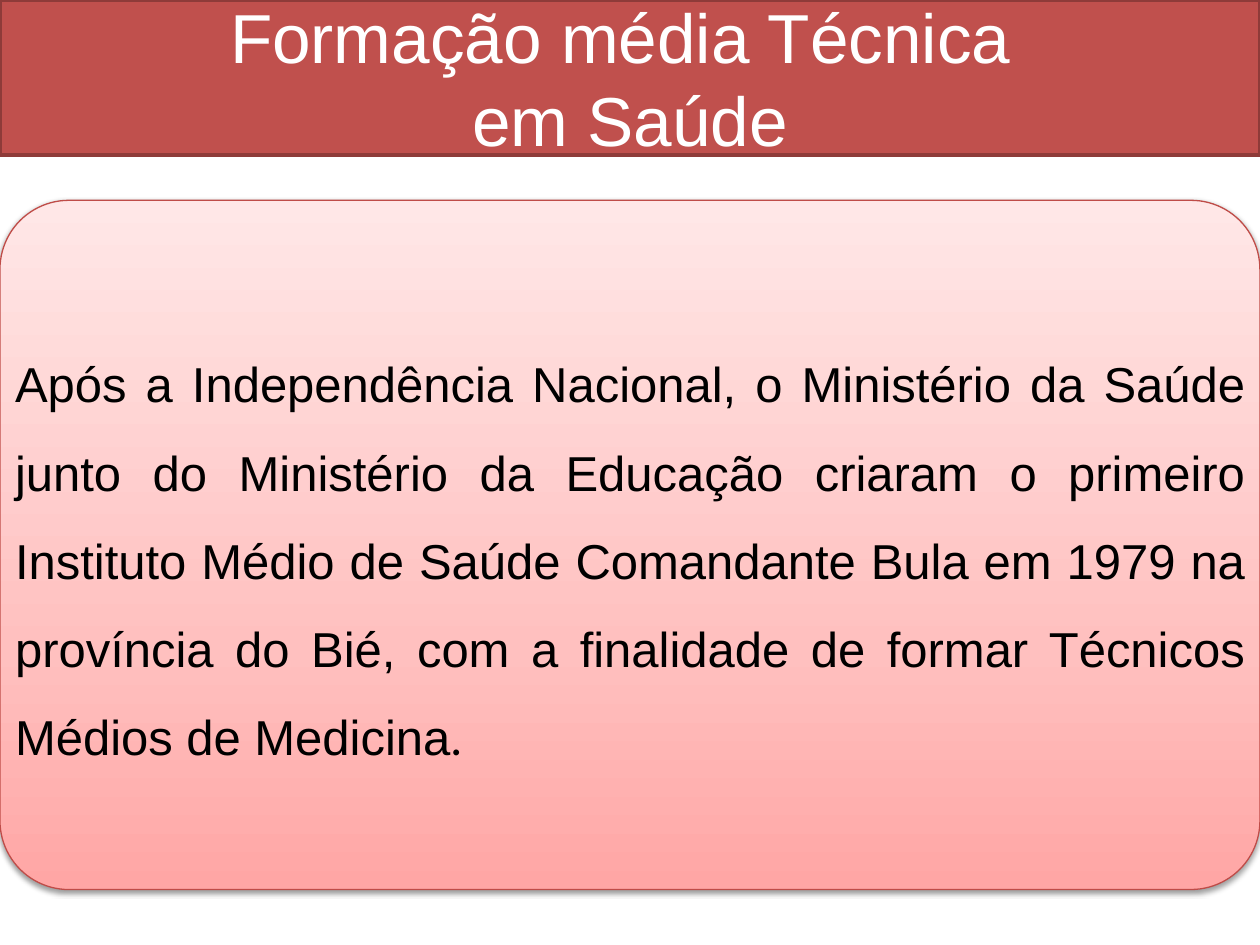
import pptx
import pptx.util
import pptx.oxml
import pptx.oxml.ns
from pptx.dml.color import RGBColor
from pptx.enum.shapes import MSO_SHAPE
from pptx.enum.text import MSO_ANCHOR, PP_ALIGN
from pptx.util import Inches, Pt

RED = RGBColor(0xC0, 0x50, 0x4D)
DARK = RGBColor(0x8E, 0x3B, 0x39)
EDGE = RGBColor(0xBF, 0x4C, 0x48)
WHITE = RGBColor(0xFF, 0xFF, 0xFF)
BLACK = RGBColor(0, 0, 0)
STOPS = [(0, RGBColor(0xFF, 0xA6, 0xA5)),
         (35, RGBColor(0xFF, 0xC0, 0xBF)),
         (100, RGBColor(0xFF, 0xE7, 0xE7))]

TITLE = "Formação média Técnica \vem Saúde"
BODY = ("Após a Independência Nacional, o Ministério da Saúde junto do "
        "Ministério da Educação criaram o primeiro Instituto Médio de Saúde "
        "Comandante Bula em 1979 na província do Bié, com a finalidade de "
        "formar Técnicos Médios de Medicina")


def style(run, size, color, face="Arial"):
    run.font.size = Pt(size)
    run.font.name = face
    run.font.color.rgb = color


def outline(shape, color, width):
    shape.line.color.rgb = color
    shape.line.width = Pt(width)


def shade(shape):
    """Give the shape an upward gradient and a soft shadow below it."""
    props = shape._element.spPr
    space = pptx.oxml.ns.nsdecls("a")
    stops = "".join(f'<a:gs pos="{pos * 1000}"><a:srgbClr val="{color}"/></a:gs>'
                    for pos, color in STOPS)
    fill = pptx.oxml.parse_xml(
        f'<a:gradFill {space} rotWithShape="1"><a:gsLst>{stops}</a:gsLst>'
        '<a:lin ang="16200000" scaled="1"/></a:gradFill>')
    props.find(pptx.oxml.ns.qn("a:prstGeom")).addnext(fill)
    shadow = pptx.oxml.parse_xml(
        f'<a:effectLst {space}><a:outerShdw blurRad="{Pt(3.1)}" '
        f'dist="{Pt(1.6)}" dir="5400000" rotWithShape="0">'
        '<a:srgbClr val="000000"><a:alpha val="38000"/></a:srgbClr>'
        '</a:outerShdw></a:effectLst>')
    props.find(pptx.oxml.ns.qn("a:ln")).addnext(shadow)


def add_title(slide, box):
    bar = slide.shapes.add_shape(MSO_SHAPE.RECTANGLE, *box)
    bar.shadow.inherit = False
    bar.fill.solid()
    bar.fill.fore_color.rgb = RED
    outline(bar, DARK, 2)
    frame = bar.text_frame
    frame.word_wrap = True
    frame.vertical_anchor = MSO_ANCHOR.MIDDLE
    para = frame.paragraphs[0]
    para.text = TITLE
    para.alignment = PP_ALIGN.CENTER
    for run in para.runs:
        style(run, 39.6, WHITE)


def add_panel(slide, box):
    panel = slide.shapes.add_shape(MSO_SHAPE.ROUNDED_RECTANGLE, *box)
    panel.adjustments[0] = 0.1
    outline(panel, EDGE, 0.75)
    shade(panel)

    frame = slide.shapes.add_textbox(*box).text_frame
    frame.word_wrap = True
    frame.vertical_anchor = MSO_ANCHOR.MIDDLE
    frame.margin_left = frame.margin_right = Inches(0.12)
    frame.margin_top = frame.margin_bottom = Inches(0.12)
    para = frame.paragraphs[0]
    para.text = BODY
    para.alignment = PP_ALIGN.JUSTIFY
    para.line_spacing = 1.5
    style(para.runs[0], 28, BLACK)
    stop = para.add_run()
    stop.text = ". "
    style(stop, 28, BLACK, "Calibri")


def main():
    deck = pptx.Presentation()
    deck.slide_width, deck.slide_height = Inches(10), Inches(7.5)
    slide = deck.slides.add_slide(deck.slide_layouts[6])
    add_title(slide, (0, 0, deck.slide_width, Inches(1.23)))
    add_panel(slide, (0, Inches(1.59), deck.slide_width, Inches(5.47)))
    deck.save("out.pptx")


if __name__ == "__main__":
    main()
